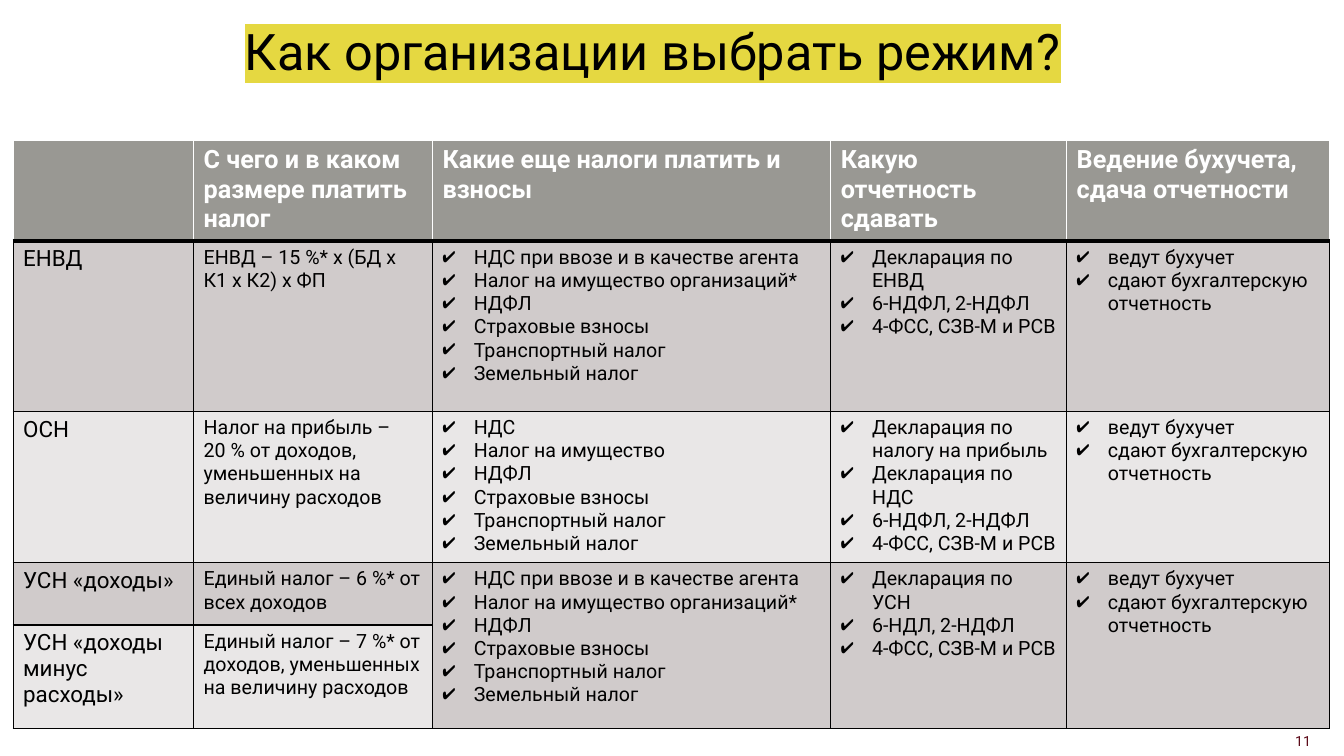
import pptx
import pptx.dml.color
import pptx.enum.text
import pptx.oxml.ns
import pptx.util
from lxml import etree

Inches = pptx.util.Inches
RGB = pptx.dml.color.RGBColor
BLACK = RGB(0, 0, 0)
WHITE = RGB(255, 255, 255)
YELLOW = RGB(0xE5, 0xD8, 0x41)
WINE = RGB(0x5B, 0x09, 0x17)
GRAY = RGB(0x99, 0x98, 0x93)
DARK = RGB(0xD0, 0xCB, 0xCB)
LIGHT = RGB(0xE9, 0xE7, 0xE7)
LEFT = pptx.enum.text.PP_ALIGN.LEFT
RIGHT = pptx.enum.text.PP_ALIGN.RIGHT


def add_tag(node, tag, **attrs):
    return etree.SubElement(node, pptx.oxml.ns.qn("a:" + tag), attrs)


def write(frame, text, size=14, color=BLACK, bold=False, align=LEFT,
          check=False, mark=None, space=None):
    """Fill a frame, one paragraph per line; check adds tick bullets, mark a highlight."""
    frame.word_wrap = True
    for i, line in enumerate(text.split("\n")):
        para = frame.add_paragraph() if i else frame.paragraphs[0]
        para.alignment = align
        if space:
            para.line_spacing = space
        if check:
            props = para._p.get_or_add_pPr()
            props.set("marL", str(Inches(0.31)))
            props.set("indent", str(-Inches(0.31)))
            add_tag(add_tag(props, "buClr"), "srgbClr", val=str(BLACK))
            add_tag(props, "buChar", char="✔")
        run = para.add_run()
        run.text = line
        font = run.font
        font.size = pptx.util.Pt(size)
        font.bold = bold
        font.color.rgb = color
        if mark:
            add_tag(add_tag(run._r.rPr, "highlight"), "srgbClr", val=str(mark))
        font.name = "Roboto"


deck = pptx.Presentation()
deck.slide_width = Inches(13.33)
deck.slide_height = Inches(7.5)
slide = deck.slides.add_slide(deck.slide_layouts[6])

title = slide.shapes.add_textbox(Inches(2.33), Inches(0.12), Inches(9.98), Inches(0.87))
title.text_frame.vertical_anchor = pptx.enum.text.MSO_ANCHOR.MIDDLE
write(title.text_frame, "Как организации выбрать режим?", size=36, mark=YELLOW, space=0.8)

taxes = "НДФЛ\nСтраховые взносы\nТранспортный налог\nЗемельный налог"
agent = "НДС при ввозе и в качестве агента\nНалог на имущество организаций*\n" + taxes
forms = "6-НДФЛ, 2-НДФЛ\n4-ФСС, СЗВ-М и РСВ"
books = "ведут бухучет\nсдают бухгалтерскую отчетность"
rows = [
    ["", "С чего и в каком размере платить налог", "Какие еще налоги платить и взносы",
     "Какую отчетность сдавать", "Ведение бухучета, сдача отчетности"],
    ["ЕНВД", "ЕНВД – 15 %* х (БД х К1 х К2) х ФП", agent,
     "Декларация по ЕНВД\n" + forms, books],
    ["ОСН", "Налог на прибыль –\n20 % от доходов, уменьшенных на величину расходов",
     "НДС\nНалог на имущество\n" + taxes,
     "Декларация по налогу на прибыль\nДекларация по НДС\n" + forms, books],
    ["УСН «доходы»", "Единый налог – 6 %* от всех доходов", agent,
     "Декларация по УСН\n6-НДЛ, 2-НДФЛ\n4-ФСС, СЗВ-М и РСВ", books],
    ["УСН «доходы минус расходы»",
     "Единый налог – 7 %* от доходов, уменьшенных на величину расходов", "", "", ""],
]
widths = [1.79, 2.37, 3.95, 2.34, 2.61]
heights = [0.9, 1.69, 1.5, 0.62, 1.03]
fills = [GRAY, DARK, LIGHT, DARK, LIGHT]

table = slide.shapes.add_table(5, 5, Inches(0.13), Inches(1.39),
                               Inches(sum(widths)), Inches(sum(heights))).table
table.first_row = False
table.horz_banding = False
for col, width in zip(table.columns, widths):
    col.width = Inches(width)
for row, height in zip(table.rows, heights):
    row.height = Inches(height)

for r, texts in enumerate(rows):
    for c, text in enumerate(texts):
        cell = table.cell(r, c)
        props = cell._tc.get_or_add_tcPr()
        for side in "LRTB":
            thick = (r, side) in [(0, "B"), (1, "T")]
            edge = WHITE if r == 0 and side != "B" else BLACK
            line = add_tag(props, "ln" + side, w=str(pptx.util.Pt(3 if thick else 1)))
            add_tag(add_tag(line, "solidFill"), "srgbClr", val=str(edge))
        cell.fill.solid()
        cell.fill.fore_color.rgb = DARK if r == 4 and c > 1 else fills[r]
        if not text:
            continue
        if r == 0:
            write(cell.text_frame, text, size=18, color=WHITE, bold=True)
        else:
            write(cell.text_frame, text, size=14 if c else 16, check=c > 1)

for c in range(2, 5):
    table.cell(3, c).merge(table.cell(4, c))

number = slide.shapes.add_textbox(Inches(12.26), Inches(7.22), Inches(0.84), Inches(0.28))
write(number.text_frame, "11", size=10, color=WINE, align=RIGHT)

deck.save("out.pptx")
